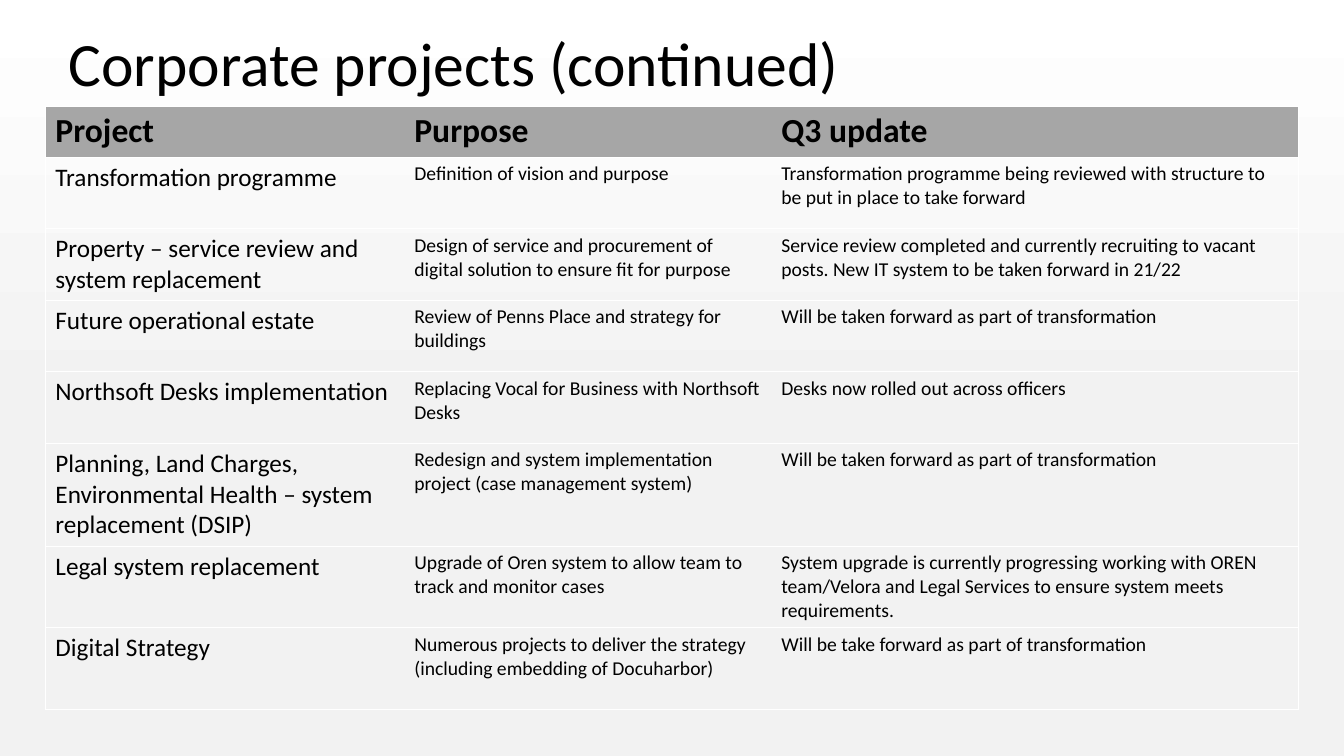
import pptx
import pptx.dml.color
import pptx.enum.text
import pptx.oxml
import pptx.oxml.ns
import pptx.util
from lxml import etree

Inches, Pt = pptx.util.Inches, pptx.util.Pt

TITLE = "Corporate projects (continued)"
PROJECTS = [
    ("Project", "Purpose", "Q3 update"),
    ("Transformation programme", "Definition of vision and purpose",
     "Transformation programme being reviewed with structure to be put in place to take forward"),
    ("Property – service review and system replacement",
     "Design of service and procurement of digital solution to ensure fit for purpose",
     "Service review completed and currently recruiting to vacant posts. "
     "New IT system to be taken forward in 21/22"),
    ("Future operational estate", "Review of Penns Place and strategy for buildings",
     "Will be taken forward as part of transformation"),
    ("Northsoft Desks implementation", "Replacing Vocal for Business with Northsoft Desks",
     "Desks now rolled out across officers"),
    ("Planning, Land Charges, Environmental Health – system replacement (DSIP)",
     "Redesign and system implementation project (case management system)",
     "Will be taken forward as part of transformation"),
    ("Legal system replacement", "Upgrade of Oren system to allow team to track and monitor cases",
     "System upgrade is currently progressing working with OREN team/Velora and "
     "Legal Services to ensure system meets requirements."),
    ("Digital Strategy",
     "Numerous projects to deliver the strategy (including embedding of Docuharbor)",
     "Will be take forward as part of transformation"),
]
COL_WIDTHS = [3.56, 3.64, 5.23]
ROW_HEIGHTS = [0.5, 0.71, 0.71, 0.71, 0.71, 1.02, 0.81, 0.81]
BACKGROUND = [(0, "FFFFFF"), (0.54, "F2F2F2")]
HEADER_FORMAT = {"size": Pt(24), "bold": True}
PROJECT_FORMAT = {"size": Pt(18), "bold": False}
DETAIL_FORMAT = {"size": Pt(14), "bold": False}


def rgb(value):
    return pptx.dml.color.RGBColor.from_string(value)


def write(tf, text, formats):
    p = tf.paragraphs[0]
    r = p.add_run()
    r.text = text
    r.font.name = "Calibri"
    r.font.color.rgb = rgb("000000")
    for name, value in formats.items():
        setattr(r.font, name, value)
    return p


def set_borders(cell, visible):
    """Draw the sides in visible with a thin white line and hide the others."""
    tc_pr = cell._tc.get_or_add_tcPr()
    for index, side in enumerate("LRTB"):
        ln = etree.Element(pptx.oxml.ns.qn("a:ln" + side), w=str(Pt(0.5)))
        if side in visible:
            fill = etree.SubElement(ln, pptx.oxml.ns.qn("a:solidFill"))
            etree.SubElement(fill, pptx.oxml.ns.qn("a:srgbClr"), val="FFFFFF")
        else:
            etree.SubElement(ln, pptx.oxml.ns.qn("a:noFill"))
        tc_pr.insert(index, ln)


def add_title(s):
    sp = s.shapes.title
    sp.left, sp.top, sp.width, sp.height = map(Inches, (0.58, 0.11, 11.5, 1.1))
    tf = sp.text_frame
    tf.word_wrap = True
    tf.auto_size = pptx.enum.text.MSO_AUTO_SIZE.NONE
    tf.vertical_anchor = pptx.enum.text.MSO_ANCHOR.MIDDLE
    p = write(tf, TITLE, {"size": Pt(44)})
    p.alignment = pptx.enum.text.PP_ALIGN.LEFT
    p.line_spacing = 0.9


def add_projects(s):
    table = s.shapes.add_table(
        len(PROJECTS), len(COL_WIDTHS), Inches(0.45), Inches(1.05),
        Inches(sum(COL_WIDTHS)), Inches(sum(ROW_HEIGHTS))).table
    table.horz_banding = False
    for column, width in zip(table.columns, COL_WIDTHS):
        column.width = Inches(width)
    for row, height in zip(table.rows, ROW_HEIGHTS):
        row.height = Inches(height)
    last = len(COL_WIDTHS) - 1
    for i, texts in enumerate(PROJECTS):
        for j, text in enumerate(texts):
            cell = table.cell(i, j)
            if i == 0:
                cell.fill.solid()
                cell.fill.fore_color.rgb = rgb("A6A6A6")
                formats = HEADER_FORMAT
            else:
                cell.fill.background()
                formats = DETAIL_FORMAT if j else PROJECT_FORMAT
            write(cell.text_frame, text, formats)
            set_borders(cell, "TB" + {0: "L", last: "R"}.get(j, ""))


def main():
    prs = pptx.Presentation()
    prs.slide_width, prs.slide_height = Inches(13.33), Inches(7.5)
    s = prs.slides.add_slide(prs.slide_layouts[5])
    fill = s.background.fill
    fill.gradient()
    fill.gradient_angle = 270
    for stop, (position, color) in zip(fill.gradient_stops, BACKGROUND):
        stop.position = position
        stop.color.rgb = rgb(color)
    add_title(s)
    add_projects(s)
    prs.save("out.pptx")


if __name__ == "__main__":
    main()
